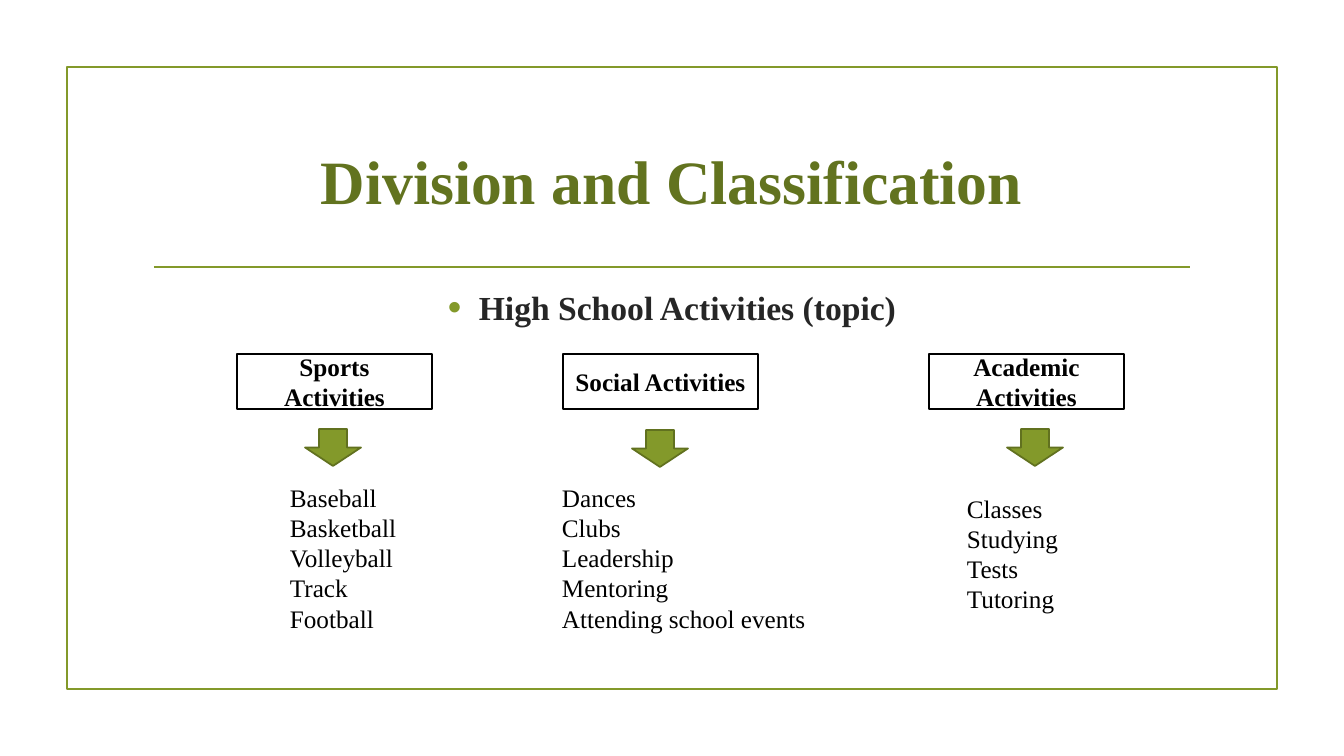
"""Build the Division and Classification slide."""
from lxml import etree
from pptx import Presentation
from pptx.dml.color import RGBColor
from pptx.enum.shapes import MSO_CONNECTOR as Link, MSO_SHAPE as Kind
from pptx.enum.text import MSO_ANCHOR as Anchor, PP_ALIGN as Align
from pptx.oxml.ns import qn
from pptx.util import Pt

PX = 9071.43
GREEN = "83992A"


def color(code):
    return RGBColor.from_string(code)


def write(shape, lines, size, code="000000", bold=False, align=Align.LEFT, anchor=Anchor.TOP):
    frame = shape.text_frame
    frame.word_wrap = True
    frame.vertical_anchor = anchor
    for i, line in enumerate(lines):
        para = frame.add_paragraph() if i else frame.paragraphs[0]
        para.alignment = align
        run = para.add_run()
        run.text = line
        font = run.font
        font.name, font.size, font.bold = "Times New Roman", Pt(size), bold
        font.color.rgb = color(code)


deck = Presentation()
deck.slide_width, deck.slide_height = round(1344 * PX), round(756 * PX)
slide = deck.slides.add_slide(deck.slide_layouts[6])
shapes = slide.shapes

rule = shapes.add_connector(Link.STRAIGHT, *[round(n * PX) for n in (154, 267, 1190, 267)])
rule.line.color.rgb = color(GREEN)
rule.line.width = Pt(1.25)
etree.SubElement(rule._element.spPr, qn("a:effectLst"))

title = shapes.add_textbox(*[round(n * PX) for n in (143, 108, 1058, 144)])
write(title, ["Division and Classification"], 44, "62731F", True, Align.CENTER, Anchor.MIDDLE)

topic = shapes.add_textbox(*[round(n * PX) for n in (143, 282, 1058, 366)])
write(topic, ["High School Activities (topic)"], 24, "262626", True, Align.CENTER)
para = topic.text_frame.paragraphs[0]
para.space_after = Pt(6)
props = para._p.get_or_add_pPr()
props.set("marL", str(round(31 * PX)))
props.set("indent", str(round(-31 * PX)))
tint = etree.SubElement(props, qn("a:buClr"))
etree.SubElement(tint, qn("a:srgbClr"), val=GREEN)
etree.SubElement(props, qn("a:buSzPct"), val="115000")
etree.SubElement(props, qn("a:buFont"), typeface="Arial")
etree.SubElement(props, qn("a:buChar"), char="•")

groups = [
    ("Sports Activities", 237, (305, 429), (280, 477, 150, 163),
     ["Baseball", "Basketball", "Volleyball", "Track", "Football"]),
    ("Social Activities", 563, (632, 430), (552, 477, 291, 194),
     ["Dances", "Clubs", "Leadership", "Mentoring", "Attending school events"]),
    ("Academic Activities", 929, (1007, 429), (957, 488, 181, 163),
     ["Classes", "Studying", "Tests", "Tutoring"]),
]
parts = [(Kind.RECTANGLE, (67, 67, 1210, 622), None, GREEN, None)]
for name, left, tip, area, items in groups:
    parts.append((Kind.RECTANGLE, (left, 354, 195, 55), "FFFFFF", "000000", name))
    parts.append((Kind.DOWN_ARROW, (*tip, 56, 37), GREEN, "61711F", None))
    box = shapes.add_textbox(*[round(n * PX) for n in area])
    write(box, items, 18)

for kind, area, fill, edge, name in parts:
    shape = shapes.add_shape(kind, *[round(n * PX) for n in area])
    shape.shadow.inherit = False
    if fill:
        shape.fill.solid()
        shape.fill.fore_color.rgb = color(fill)
    else:
        shape.fill.background()
    shape.line.color.rgb = color(edge)
    shape.line.width = Pt(1.25)
    if name:
        write(shape, [name], 18, bold=True, align=Align.CENTER, anchor=Anchor.MIDDLE)

deck.save("out.pptx")
